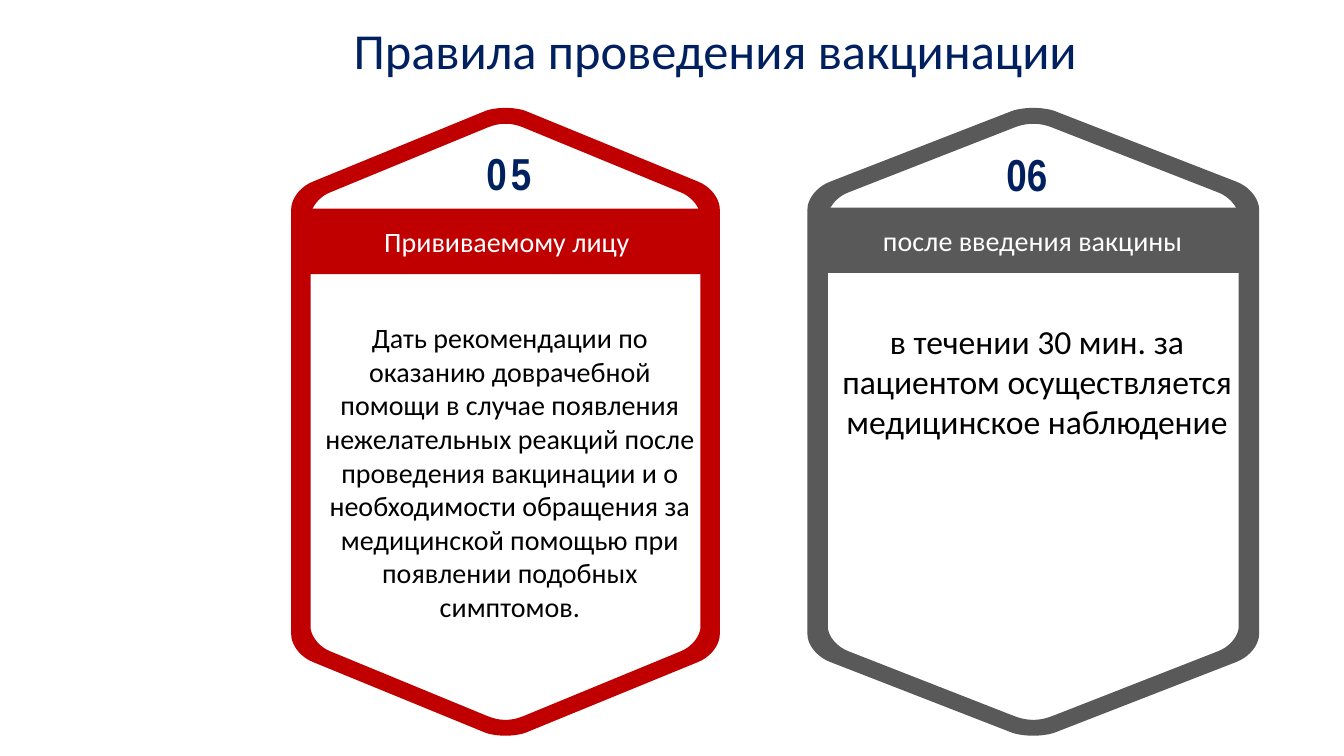
import pptx
import pptx.dml.color
import pptx.enum.shapes
import pptx.enum.text
import pptx.util

Cm = pptx.util.Cm
ALIGN = pptx.enum.text.PP_ALIGN
ANCHOR = pptx.enum.text.MSO_ANCHOR
AUTO_SIZE = pptx.enum.text.MSO_AUTO_SIZE

COLORS = {"red": "C00000", "gray": "595959", "navy": "002060", "black": "000000", "white": "FFFFFF"}
FRAME_MIDDLE = 10.63
INNER_WIDTH_RATIO = 0.91
OUTER_CURVES = (
    ((0, 7.91), (0.04, 7.91), (0.08, 7.87), (0.1, 7.82)),
    ((0.9, 6.05), (0.96, 5.92), (1, 5.61), (1, 5.36)),
)
INNER_CURVES = (
    ((0, 7.51), (0.04, 7.51), (0.07, 7.46), (0.1, 7.4)),
    ((0.9, 5.78), (0.96, 5.66), (1, 5.38), (1, 5.16)),
)
CARDS = (
    {
        "color": "red", "center": 12.74, "half_width": 5.4,
        "number": ("05", (12.14, 3.66, 1.37, 1.37), 3),
        "heading": ("Прививаемому лицу", (7.67, 5.26, 10.21, 1.65)),
        "body": (
            "Дать рекомендации по оказанию доврачебной помощи в случае появления "
            "нежелательных реакций после проведения вакцинации и о необходимости "
            "обращения за медицинской помощью при появлении подобных симптомов.",
            (8.05, 8.08, 9.6, 7.7), 20, 0),
    },
    {
        "color": "gray", "center": 26.04, "half_width": 5.69,
        "number": ("06", (25.22, 3.71, 1.32, 1.37), 0),
        "heading": ("после введения вакцины", (20.78, 5.23, 10.49, 1.65)),
        "body": (
            "в течении 30 мин. за пациентом осуществляется медицинское наблюдение",
            (21.03, 8.08, 10.21, 3.07), 24, 6),
    },
)


def bezier(points, steps=10):
    """Return points along a cubic curve."""
    curve = []
    for step in range(steps + 1):
        t = step / steps
        weights = ((1 - t) ** 3, 3 * t * (1 - t) ** 2, 3 * t ** 2 * (1 - t), t ** 3)
        curve.append(tuple(sum(w * p[axis] for w, p in zip(weights, points)) for axis in (0, 1)))
    return curve


def outline(curves, center, half_width):
    """Mirror a quarter of a rounded hexagon into a full outline."""
    quarter = [point for points in curves for point in bezier(points)]
    contour = []
    for side, rise, order in ((1, -1, 1), (1, 1, -1), (-1, 1, 1), (-1, -1, -1)):
        contour += [
            (Cm(center + side * x * half_width), Cm(FRAME_MIDDLE + rise * y))
            for x, y in quarter[::order]
        ]
    return contour


class SlideBuilder:
    """Hold the slide style and draw its elements."""

    def __init__(self, slide):
        """Keep the current slide."""
        self.slide = slide

    def color(self, name):
        """Return a named colour."""
        return pptx.dml.color.RGBColor.from_string(COLORS[name])

    def paint(self, shape, color):
        """Give a shape a plain fill."""
        shape.shadow.inherit = False
        shape.fill.solid()
        shape.fill.fore_color.rgb = self.color(color)
        shape.line.fill.background()

    def fill_text(self, shape, text, color, frame_format, paragraph_format, font_format, spacing=0):
        """Put one formatted paragraph into a shape."""
        paragraph = shape.text_frame.paragraphs[0]
        run = paragraph.add_run()
        run.text = text
        run.font.color.rgb = self.color(color)
        for target, values in (
            (shape.text_frame, frame_format),
            (paragraph, paragraph_format),
            (run.font, font_format),
        ):
            for name, value in values.items():
                setattr(target, name, value)
        if spacing:
            run._r.get_or_add_rPr().set("spc", str(spacing * 100))

    def frame(self, color, center, half_width):
        """Draw a hollow rounded hexagon."""
        outer = outline(OUTER_CURVES, center, half_width)
        inner = outline(INNER_CURVES, center, half_width * INNER_WIDTH_RATIO)
        builder = self.slide.shapes.build_freeform(*outer[0])
        builder.add_line_segments(outer[1:])
        builder.move_to(*inner[0])
        builder.add_line_segments(inner[1:])
        self.paint(builder.convert_to_shape(), color)

    def band(self, text, box, color):
        """Draw a filled heading band."""
        shape = self.slide.shapes.add_shape(
            pptx.enum.shapes.MSO_SHAPE.RECTANGLE, *map(Cm, box))
        self.paint(shape, color)
        self.fill_text(
            shape, text, "white",
            {"vertical_anchor": ANCHOR.MIDDLE, "word_wrap": True},
            {"alignment": ALIGN.CENTER},
            {"name": "Calibri", "size": pptx.util.Pt(20)})

    def label(self, text, box, color, size, font="Calibri", bold=False, spacing=0, space_after=0):
        """Add centred text without margins."""
        margins = dict.fromkeys(("margin_left", "margin_top", "margin_right", "margin_bottom"), 0)
        self.fill_text(
            self.slide.shapes.add_textbox(*map(Cm, box)), text, color,
            {"word_wrap": True, "auto_size": AUTO_SIZE.SHAPE_TO_FIT_TEXT, **margins},
            {"alignment": ALIGN.CENTER, "space_after": pptx.util.Pt(space_after)},
            {"name": font, "size": pptx.util.Pt(size), "bold": bold}, spacing)

    def title(self, text, box):
        """Add the slide title on one line."""
        self.fill_text(
            self.slide.shapes.add_textbox(*map(Cm, box)), text, "navy",
            {"word_wrap": False, "auto_size": AUTO_SIZE.SHAPE_TO_FIT_TEXT},
            {"alignment": ALIGN.LEFT},
            {"name": "Calibri", "size": pptx.util.Pt(36)})

    def card(self, color, center, half_width, number, heading, body):
        """Draw a framed card with its texts."""
        self.frame(color, center, half_width)
        self.band(*heading, color)
        number_text, number_box, spacing = number
        self.label(number_text, number_box, "navy", 32, "Arial Narrow", True, spacing)
        body_text, body_box, size, space_after = body
        self.label(body_text, body_box, "black", size, space_after=space_after)


def main():
    """Build and save the presentation."""
    presentation = pptx.Presentation()
    presentation.slide_width = Cm(33.87)
    presentation.slide_height = Cm(19.05)
    builder = SlideBuilder(presentation.slides.add_slide(presentation.slide_layouts[6]))
    for card in CARDS:
        builder.card(**card)
    builder.title("Правила проведения вакцинации", (8.66, 0.36, 18.95, 1.8))
    presentation.save("out.pptx")


if __name__ == "__main__":
    main()
